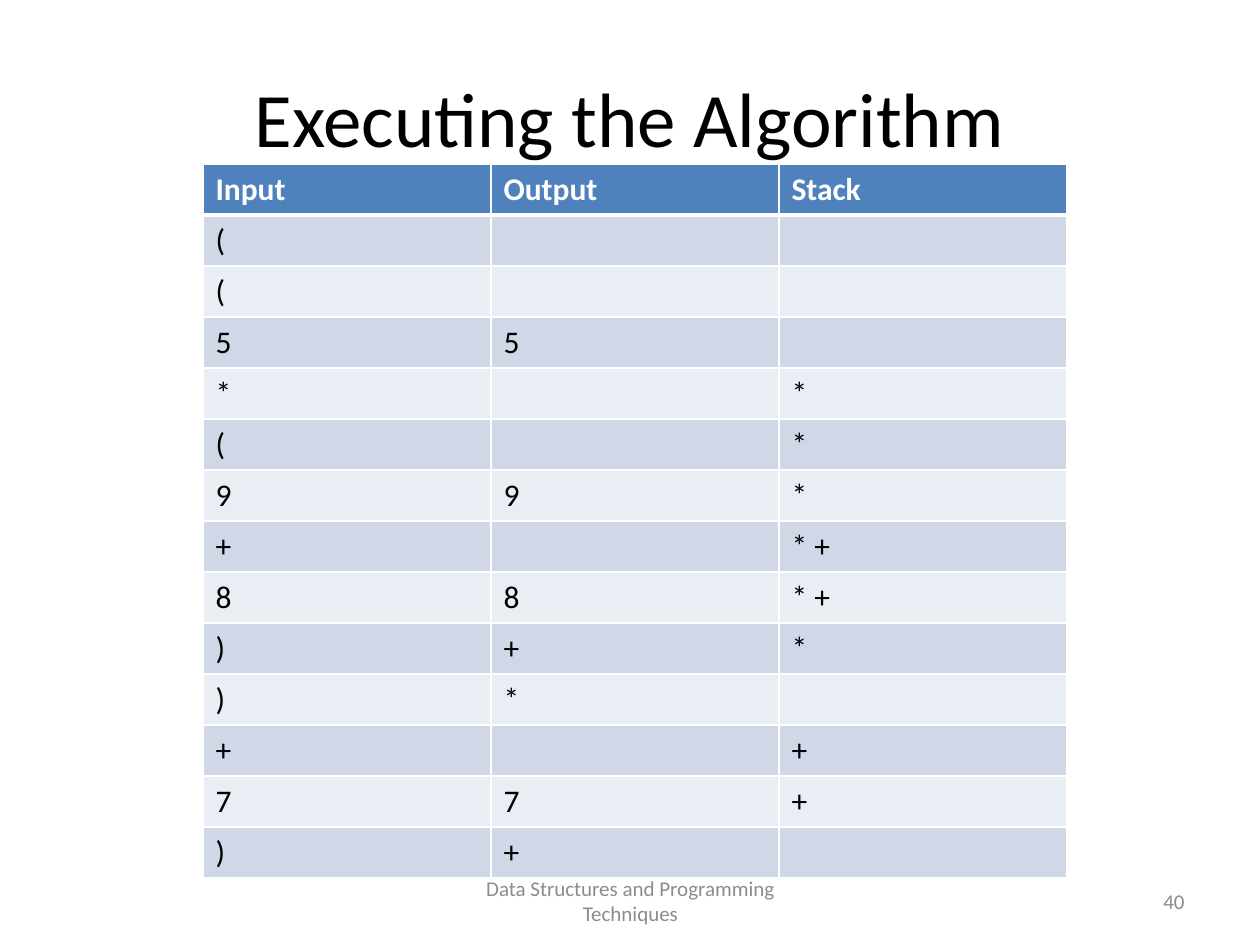
"""Build the slide that traces an infix-to-postfix algorithm step by step."""
from dataclasses import dataclass

import lxml.etree
import pptx
import pptx.dml.color
import pptx.enum.text
import pptx.oxml.ns
import pptx.util

PIXELS_PER_INCH = 126
FONT = "Calibri"
BLACK = pptx.dml.color.RGBColor(0x00, 0x00, 0x00)
WHITE = pptx.dml.color.RGBColor(0xFF, 0xFF, 0xFF)
GRAY = pptx.dml.color.RGBColor(0x8C, 0x8C, 0x8C)
HEADER_BLUE = pptx.dml.color.RGBColor(0x4F, 0x81, 0xBD)
DARK_BAND = pptx.dml.color.RGBColor(0xD0, 0xD8, 0xE8)
LIGHT_BAND = pptx.dml.color.RGBColor(0xE9, 0xED, 0xF4)

CENTER = pptx.enum.text.PP_ALIGN.CENTER
RIGHT = pptx.enum.text.PP_ALIGN.RIGHT

TABLE_LEFT, TABLE_TOP = 203, 164
COLUMN_WIDTH, ROW_HEIGHT = 288, 51


@dataclass(frozen=True)
class Label:
    text: str
    left: int
    top: int
    width: int
    height: int
    size: int
    color: pptx.dml.color.RGBColor
    alignment: pptx.enum.text.PP_ALIGN


@dataclass(frozen=True)
class Step:
    input: str
    output: str = ""
    stack: str = ""


LABELS = [
    Label("Executing the Algorithm", 63, 38, 1134, 158, 44, BLACK, CENTER),
    Label("Data Structures and Programming Techniques", 431, 876, 399, 50, 12, GRAY, CENTER),
    Label("40", 903, 876, 294, 50, 12, GRAY, RIGHT),
]

HEADER = Step("Input", "Output", "Stack")
STEPS = [
    Step("("),
    Step("("),
    Step("5", "5"),
    Step("*", "", "*"),
    Step("(", "", "*"),
    Step("9", "9", "*"),
    Step("+", "", "* +"),
    Step("8", "8", "* +"),
    Step(")", "+", "*"),
    Step(")", "*"),
    Step("+", "", "+"),
    Step("7", "7", "+"),
    Step(")", "+"),
]


def px(length: int) -> int:
    return round(length * 914400 / PIXELS_PER_INCH)


def add_run(paragraph, text: str, size: int, color, bold: bool = False) -> None:
    run = paragraph.add_run()
    run.text = text
    run.font.name = FONT
    run.font.size = pptx.util.Pt(size)
    run.font.bold = bold
    run.font.color.rgb = color


def add_label(slide, label: Label) -> None:
    shape = slide.shapes.add_textbox(
        px(label.left), px(label.top), px(label.width), px(label.height)
    )
    frame = shape.text_frame
    frame.word_wrap = True
    frame.vertical_anchor = pptx.enum.text.MSO_ANCHOR.MIDDLE
    paragraph = frame.paragraphs[0]
    paragraph.alignment = label.alignment
    add_run(paragraph, label.text, label.size, label.color)


def set_border(cell, side: str, points: int) -> None:
    qn = pptx.oxml.ns.qn
    line = lxml.etree.Element(qn(f"a:{side}"), w=str(pptx.util.Pt(points)))
    fill = lxml.etree.SubElement(line, qn("a:solidFill"))
    lxml.etree.SubElement(fill, qn("a:srgbClr"), val=str(WHITE))
    cell._tc.get_or_add_tcPr().append(line)


def fill_row(table, row: int, step: Step, fill, color) -> None:
    is_header = row == 0
    for column, text in enumerate((step.input, step.output, step.stack)):
        cell = table.cell(row, column)
        for side in ("lnL", "lnR", "lnT", "lnB"):
            is_header_rule = (is_header and side == "lnB") or (row == 1 and side == "lnT")
            set_border(cell, side, 3 if is_header_rule else 1)
        cell.fill.solid()
        cell.fill.fore_color.rgb = fill
        if text:
            add_run(cell.text_frame.paragraphs[0], text, 18, color, is_header)


def add_trace_table(slide) -> None:
    row_count = len(STEPS) + 1
    table = slide.shapes.add_table(
        row_count, 3, px(TABLE_LEFT), px(TABLE_TOP),
        px(3 * COLUMN_WIDTH), px(row_count * ROW_HEIGHT),
    ).table
    for column in table.columns:
        column.width = px(COLUMN_WIDTH)
    for row in table.rows:
        row.height = px(ROW_HEIGHT)
    fill_row(table, 0, HEADER, HEADER_BLUE, WHITE)
    for row, step in enumerate(STEPS, start=1):
        fill_row(table, row, step, DARK_BAND if row % 2 else LIGHT_BAND, BLACK)


def main() -> None:
    presentation = pptx.Presentation()
    presentation.slide_width = px(1260)
    presentation.slide_height = px(945)
    slide = presentation.slides.add_slide(presentation.slide_layouts[6])
    title, *footers = LABELS
    add_label(slide, title)
    add_trace_table(slide)
    for footer in footers:
        add_label(slide, footer)
    presentation.save("out.pptx")


if __name__ == "__main__":
    main()
